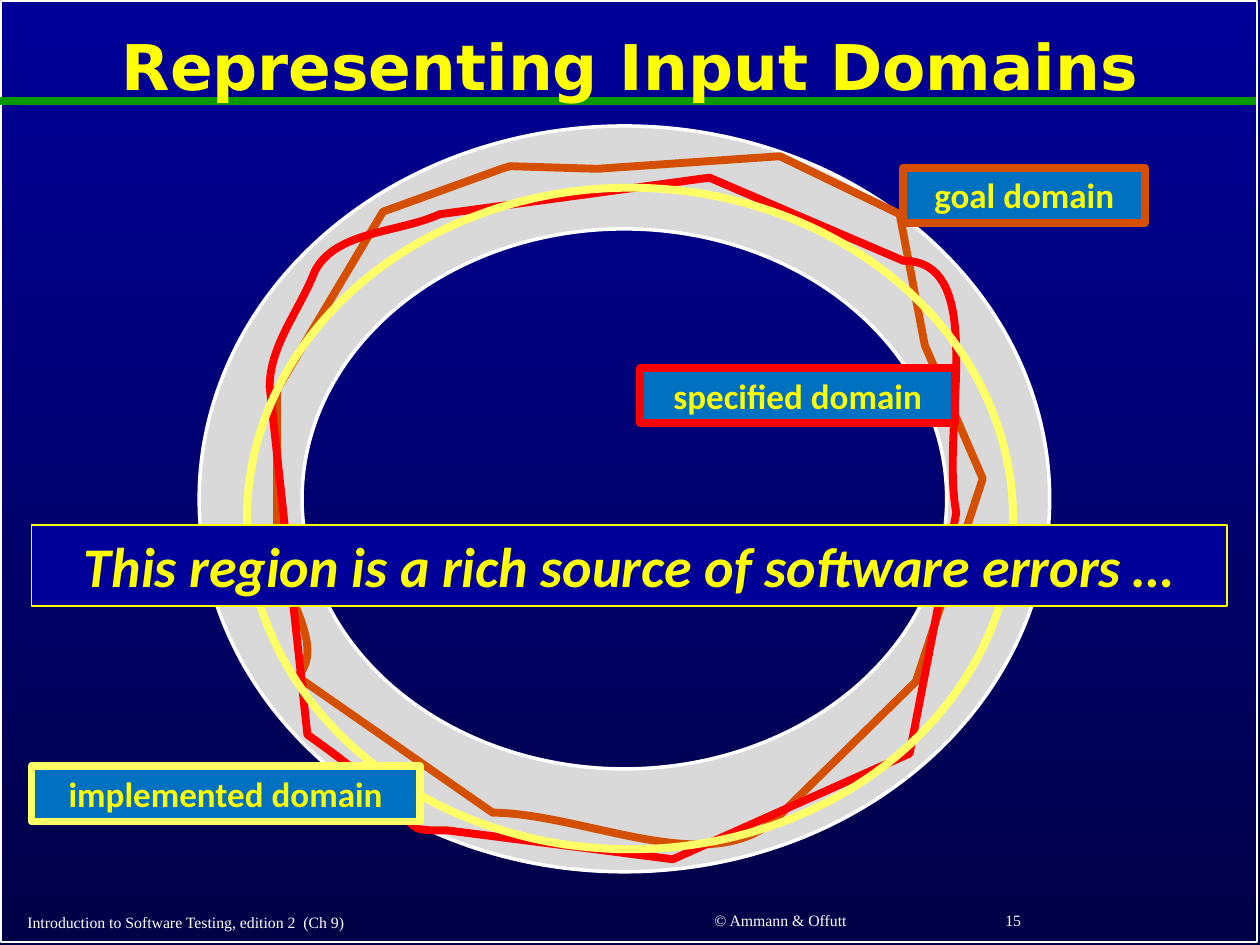
from dataclasses import dataclass

from lxml.etree import SubElement
from pptx import Presentation
from pptx.dml.color import RGBColor
from pptx.enum.shapes import MSO_CONNECTOR as Connector, MSO_SHAPE as Preset
from pptx.enum.text import MSO_ANCHOR as Anchor, MSO_AUTO_SIZE as AutoSize, PP_ALIGN as Align
from pptx.oxml.ns import qn
from pptx.util import Pt

YELLOW, PALE_YELLOW, WHITE = "FFFF00", "FFFF66", "FFFFFF"
ORANGE, RED, GREEN = "D45000", "FF0000", "009900"
BLUE, NAVY, GREY = "0070C0", "000099", "D9D9D9"
DOMAIN_LINE = 4.5


@dataclass
class Box:
    left: float
    top: float
    width: float
    height: float

    def lengths(self) -> list:
        return [Pt(value) for value in (self.left, self.top, self.width, self.height)]


@dataclass
class TextStyle:
    font: str
    size: float
    color: str
    bold: bool = False
    italic: bool = False


@dataclass
class Label:
    box: Box
    runs: list  # (text, colour) pairs
    fill: str
    line: str
    line_width: float
    style: TextStyle


@dataclass
class Footer:
    box: Box
    text: str
    align: Align


def rgb(color: str) -> RGBColor:
    return RGBColor.from_string(color)


def style_shape(shape, fill, line: str, width: float) -> None:
    shape.shadow.inherit = False
    if fill:
        shape.fill.solid()
        shape.fill.fore_color.rgb = rgb(fill)
    else:
        shape.fill.background()
    shape.line.color.rgb = rgb(line)
    shape.line.width = Pt(width)


def add_preset(slide, preset, box: Box, fill, line: str, width: float):
    shape = slide.shapes.add_shape(preset, *box.lengths())
    style_shape(shape, fill, line, width)
    return shape


def add_run(paragraph, text: str, style: TextStyle, color: str = "") -> None:
    run = paragraph.add_run()
    run.text = text
    run.font.name = style.font
    run.font.size = Pt(style.size)
    run.font.bold = style.bold
    run.font.italic = style.italic
    run.font.color.rgb = rgb(color or style.color)


def add_label(slide, label: Label) -> None:
    shape = add_preset(slide, Preset.RECTANGLE, label.box, label.fill, label.line, label.line_width)
    frame = shape.text_frame
    frame.word_wrap = True
    frame.auto_size = AutoSize.SHAPE_TO_FIT_TEXT
    frame.vertical_anchor = Anchor.TOP
    paragraph = frame.paragraphs[0]
    paragraph.alignment = Align.CENTER
    for text, color in label.runs:
        add_run(paragraph, text, label.style, color)


def add_footer(slide, footer: Footer, style: TextStyle) -> None:
    frame = slide.shapes.add_textbox(*footer.box.lengths()).text_frame
    frame.word_wrap = True
    frame.vertical_anchor = Anchor.BOTTOM
    paragraph = frame.paragraphs[0]
    paragraph.alignment = footer.align
    add_run(paragraph, footer.text, style)


def add_outline(slide, start: tuple, steps: list, color: str) -> None:
    """Closed outline; a step of one point is a line, of three points a Bezier curve."""
    builder = slide.shapes.build_freeform(Pt(start[0]), Pt(start[1]))
    points = [(Pt(x), Pt(y)) for step in steps for x, y in step]
    builder.add_line_segments(points, close=True)
    shape = builder.convert_to_shape()
    style_shape(shape, None, color, DOMAIN_LINE)

    # Merge the three segments of each curve into one Bezier element
    segments = iter(list(shape._element.iter(qn("a:lnTo"))))
    for step in steps:
        first, *others = [next(segments) for _ in step]
        if others:
            first.tag = qn("a:cubicBezTo")
            for segment in others:
                first.append(segment[0])
                segment.getparent().remove(segment)


GOAL_START = (291.6, 95)
GOAL_STEPS = [
    [(286.6, 96.5)], [(218.9, 121)], [(158.4, 222.5)], [(158.4, 316.8)],
    [(162.7, 340.6), (186.5, 370.1), (169.9, 386.6)],
    [(281.5, 464.4)],
    [(336.2, 465.1), (407.5, 504), (445.7, 465.8)],
    [(523.4, 389.5)], [(561.6, 273.6)], [(528.5, 197.3)],
    [(514.1, 122.4)], [(445.7, 89.3)], [(341.3, 96.5)],
]
SPECIFIED_START = (251.3, 122.4)
SPECIFIED_STEPS = [
    [(227.5, 133.2), (192.2, 131.8), (180, 154.8)],
    [(171.4, 177.1), (154.1, 197.3), (154.1, 221)],
    [(175.7, 419.8)],
    [(254.2, 475.2), (221.8, 474.5), (255.6, 474.5)],
    [(384.5, 491)], [(519.8, 430.6)], [(546.5, 293)],
    [(537.1, 244.8), (565.9, 149), (516.2, 149)],
    [(405.4, 101.5)],
]

TITLE_STYLE = TextStyle("DejaVu Sans", 36, YELLOW, bold=True)
FOOTER_STYLE = TextStyle("Times New Roman", 9, WHITE)
LABEL_STYLE = TextStyle("Calibri", 20, YELLOW, bold=True)
BANNER_STYLE = TextStyle("Calibri", 32, YELLOW, bold=True, italic=True)

FOOTERS = [
    Footer(Box(8.6, 513.4, 307.4, 22.3), "Introduction to Software Testing, edition 2  (Ch 9)", Align.LEFT),
    Footer(Box(331.9, 514.8, 228.2, 20.2), "© Ammann & Offutt", Align.CENTER),
    Footer(Box(567.4, 514.1, 141.8, 20.9), "15", Align.LEFT),
]
DOMAINS = [
    ("goal ", Box(516.2, 95.8, 138.2, 31.7), ORANGE),
    ("specified ", Box(365.8, 210.2, 180, 31.7), RED),
    ("implemented ", Box(18, 437.8, 221.8, 31.7), PALE_YELLOW),
]
BANNER = Label(Box(18, 300.2, 683.3, 46.1),
               [("This region is a rich source of software errors …", YELLOW)],
               NAVY, YELLOW, 1, BANNER_STYLE)


def main() -> None:
    presentation = Presentation()
    presentation.slide_width, presentation.slide_height = Pt(720), Pt(540)
    slide = presentation.slides.add_slide(presentation.slide_layouts[5])

    # Background, frame and title rule
    background = slide.background.fill
    background.gradient()
    background.gradient_angle = 270
    for stop, color in zip(background.gradient_stops, (NAVY, "000047")):
        stop.color.rgb = rgb(color)
    add_preset(slide, Preset.RECTANGLE, Box(0.7, 0.7, 717.8, 537.8), None, WHITE, 1)
    rule = slide.shapes.add_connector(Connector.STRAIGHT, Pt(0), Pt(57.6), Pt(717.8), Pt(57.6))
    rule.line.color.rgb = rgb(GREEN)
    rule.line.width = Pt(4.5)
    SubElement(rule._element.spPr, qn("a:effectLst"))

    # Error region and goal domain
    ring = add_preset(slide, Preset.DONUT, Box(113.8, 72, 486, 426.2), GREY, WHITE, 2)
    ring.adjustments[0] = 0.138
    add_outline(slide, GOAL_START, GOAL_STEPS, ORANGE)

    # Title, brought in front of the rule
    title = slide.shapes.title
    title.left, title.top, title.width, title.height = Box(7.2, 7.9, 705.6, 64.1).lengths()
    title.text_frame.auto_size = AutoSize.NONE
    title.text_frame.vertical_anchor = Anchor.MIDDLE
    paragraph = title.text_frame.paragraphs[0]
    paragraph.alignment = Align.CENTER
    paragraph.line_spacing = 0.9
    add_run(paragraph, "Representing Input Domains", TITLE_STYLE)
    slide.shapes._spTree.append(title._element)

    for footer in FOOTERS:
        add_footer(slide, footer, FOOTER_STYLE)

    # Specified and implemented domains
    add_outline(slide, SPECIFIED_START, SPECIFIED_STEPS, RED)
    add_preset(slide, Preset.OVAL, Box(141.1, 107.3, 437.8, 378), None, PALE_YELLOW, DOMAIN_LINE)

    # Labels and banner
    for name, box, color in DOMAINS:
        runs = [(name, YELLOW), ("domain", "FAFD00")]
        add_label(slide, Label(box, runs, BLUE, color, DOMAIN_LINE, LABEL_STYLE))
    add_label(slide, BANNER)

    presentation.save("out.pptx")


if __name__ == "__main__":
    main()
